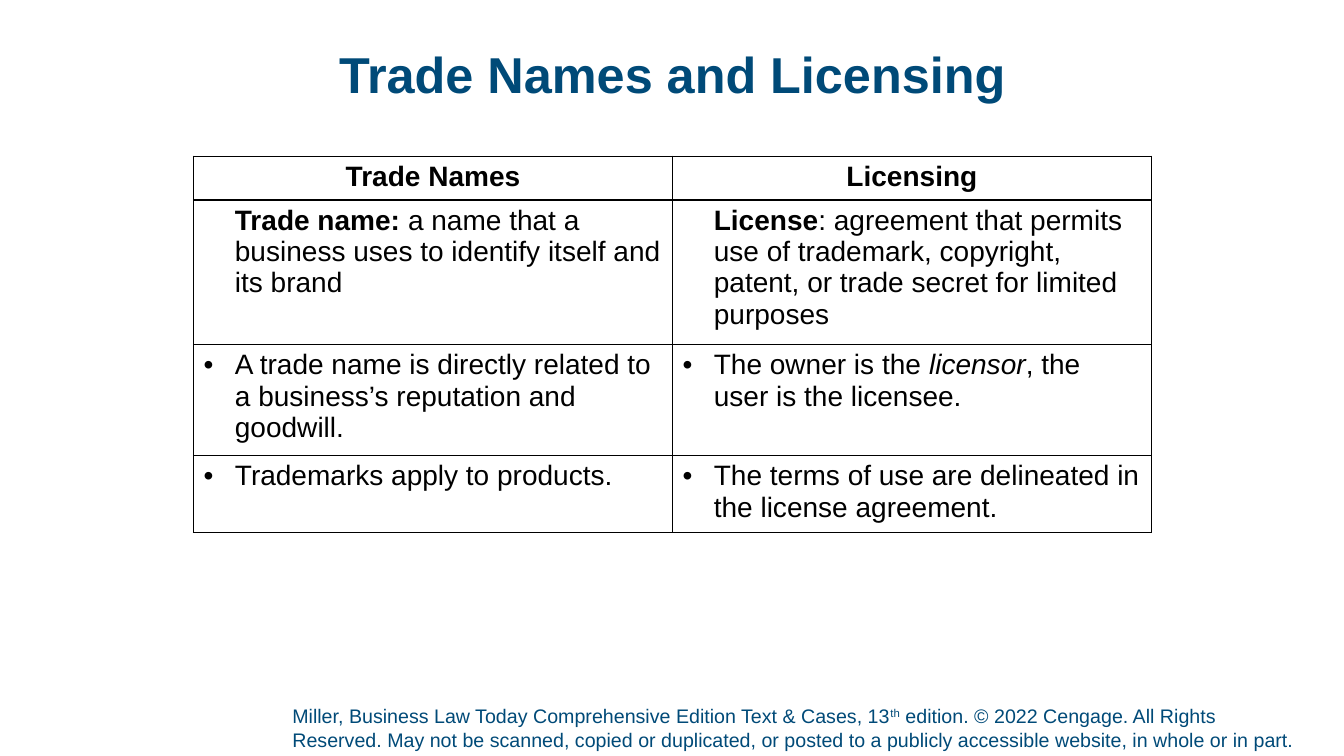
from dataclasses import dataclass

from lxml.etree import SubElement
from pptx import Presentation
from pptx.dml.color import RGBColor
from pptx.enum.text import MSO_ANCHOR as Anchor, MSO_AUTO_SIZE as AutoSize, PP_ALIGN as Align
from pptx.oxml.ns import qn
from pptx.slide import Slide
from pptx.text.text import TextFrame, _Paragraph as Paragraph
from pptx.util import Inches, Pt

BLUE = RGBColor(0x00, 0x4A, 0x78)
BLACK = RGBColor(0x00, 0x00, 0x00)
WHITE = RGBColor(0xFF, 0xFF, 0xFF)
FONT = "Arial"
INDENT = Inches(0.31)
COLUMN_WIDTH = Inches(4.75)
ROW_HEIGHTS = (0.41, 1.34, 1.03, 0.72)


@dataclass(frozen=True)
class Piece:
    text: str
    bold: bool | None = None
    italic: bool | None = None
    baseline: int = 0


@dataclass(frozen=True)
class Entry:
    pieces: tuple[Piece, ...]
    heading: bool = False
    bullet: bool = False


def heading(text: str) -> Entry:
    return Entry((Piece(text),), heading=True)


def definition(term: str, meaning: str) -> Entry:
    return Entry((Piece(term, bold=True), Piece(meaning)))


def point(*pieces: Piece) -> Entry:
    return Entry(pieces, bullet=True)


ROWS = (
    (heading("Trade Names"), heading("Licensing")),
    (
        definition("Trade name: ", "a name that a business uses to identify itself and its brand"),
        definition(
            "License",
            ": agreement that permits use of trademark, copyright, patent, "
            "or trade secret for limited purposes",
        ),
    ),
    (
        point(Piece("A trade name is directly related to a business’s reputation and goodwill.")),
        point(
            Piece("The owner is the "),
            Piece("licensor", italic=True),
            Piece(", the user is the licensee."),
        ),
    ),
    (
        point(Piece("Trademarks apply to products.")),
        point(Piece("The terms of use are delineated in the license agreement.")),
    ),
)

COPYRIGHT = (
    Piece("Miller, Business Law Today Comprehensive Edition Text & Cases, 13"),
    Piece("th", baseline=30000),
    Piece(
        " edition. © 2022 Cengage. All Rights Reserved. May not be scanned, copied or "
        "duplicated, or posted to a publicly accessible website, in whole or in part."
    ),
)


def write(paragraph: Paragraph, pieces: tuple[Piece, ...], size: int, color: RGBColor) -> None:
    paragraph.font.name = FONT
    paragraph.font.size = Pt(size)
    paragraph.font.color.rgb = color
    for piece in pieces:
        run = paragraph.add_run()
        run.text = piece.text
        run.font.bold = piece.bold
        run.font.italic = piece.italic
        if piece.baseline:
            run._r.get_or_add_rPr().set("baseline", str(piece.baseline))


def set_margins(frame: TextFrame, bottom: float = 0) -> None:
    frame.margin_left = frame.margin_top = frame.margin_right = 0
    frame.margin_bottom = Inches(bottom)


def add_title(slide: Slide) -> None:
    title = slide.shapes.title
    title.left, title.top = Inches(0.92), Inches(0.4)
    title.width, title.height = Inches(11.5), Inches(0.74)
    frame = title.text_frame
    set_margins(frame)
    frame.vertical_anchor = Anchor.MIDDLE
    paragraph = frame.paragraphs[0]
    paragraph.alignment = Align.CENTER
    paragraph.line_spacing = 0.9
    paragraph.font.bold = True
    write(paragraph, (Piece("Trade Names and Licensing"),), 36, BLUE)


def add_copyright(slide: Slide) -> None:
    box = slide.shapes.add_textbox(Inches(2.9), Inches(6.98), Inches(10.04), Inches(0.52))
    frame = box.text_frame
    set_margins(frame, bottom=0.05)
    frame.word_wrap = True
    frame.auto_size = AutoSize.SHAPE_TO_FIT_TEXT
    frame.vertical_anchor = Anchor.BOTTOM
    write(frame.paragraphs[0], COPYRIGHT, 14, BLUE)


def format_entry(paragraph: Paragraph, entry: Entry) -> None:
    if entry.heading:
        paragraph.alignment = Align.CENTER
        paragraph.font.bold = True
    else:
        properties = paragraph._p.get_or_add_pPr()
        properties.set("marL", str(INDENT))
        properties.set("indent", str(-INDENT if entry.bullet else 0))
        if entry.bullet:
            SubElement(properties, qn("a:buFont"), typeface=FONT)
            SubElement(properties, qn("a:buChar"), char="•")
        else:
            SubElement(properties, qn("a:buNone"))
    write(paragraph, entry.pieces, 20, BLACK)


def add_comparison(slide: Slide) -> None:
    frame = slide.shapes.add_table(
        len(ROWS), 2, Inches(1.92), Inches(1.55), 2 * COLUMN_WIDTH, Inches(sum(ROW_HEIGHTS))
    )
    table = frame.table
    table.first_row = table.horz_banding = False
    for column in table.columns:
        column.width = COLUMN_WIDTH
    for row, height, entries in zip(table.rows, ROW_HEIGHTS, ROWS):
        row.height = Inches(height)
        for cell, entry in zip(row.cells, entries):
            properties = cell._tc.get_or_add_tcPr()
            for side in ("lnL", "lnR", "lnT", "lnB"):
                border = SubElement(properties, qn(f"a:{side}"), w=str(Pt(1)))
                fill = SubElement(border, qn("a:solidFill"))
                SubElement(fill, qn("a:srgbClr"), val=str(BLACK))
            cell.fill.solid()
            cell.fill.fore_color.rgb = WHITE
            format_entry(cell.text_frame.paragraphs[0], entry)


def main() -> None:
    presentation = Presentation()
    presentation.slide_width = Inches(13.33)
    presentation.slide_height = Inches(7.5)
    slide = presentation.slides.add_slide(presentation.slide_layouts[5])
    add_copyright(slide)
    add_title(slide)
    add_comparison(slide)
    presentation.save("out.pptx")


if __name__ == "__main__":
    main()
